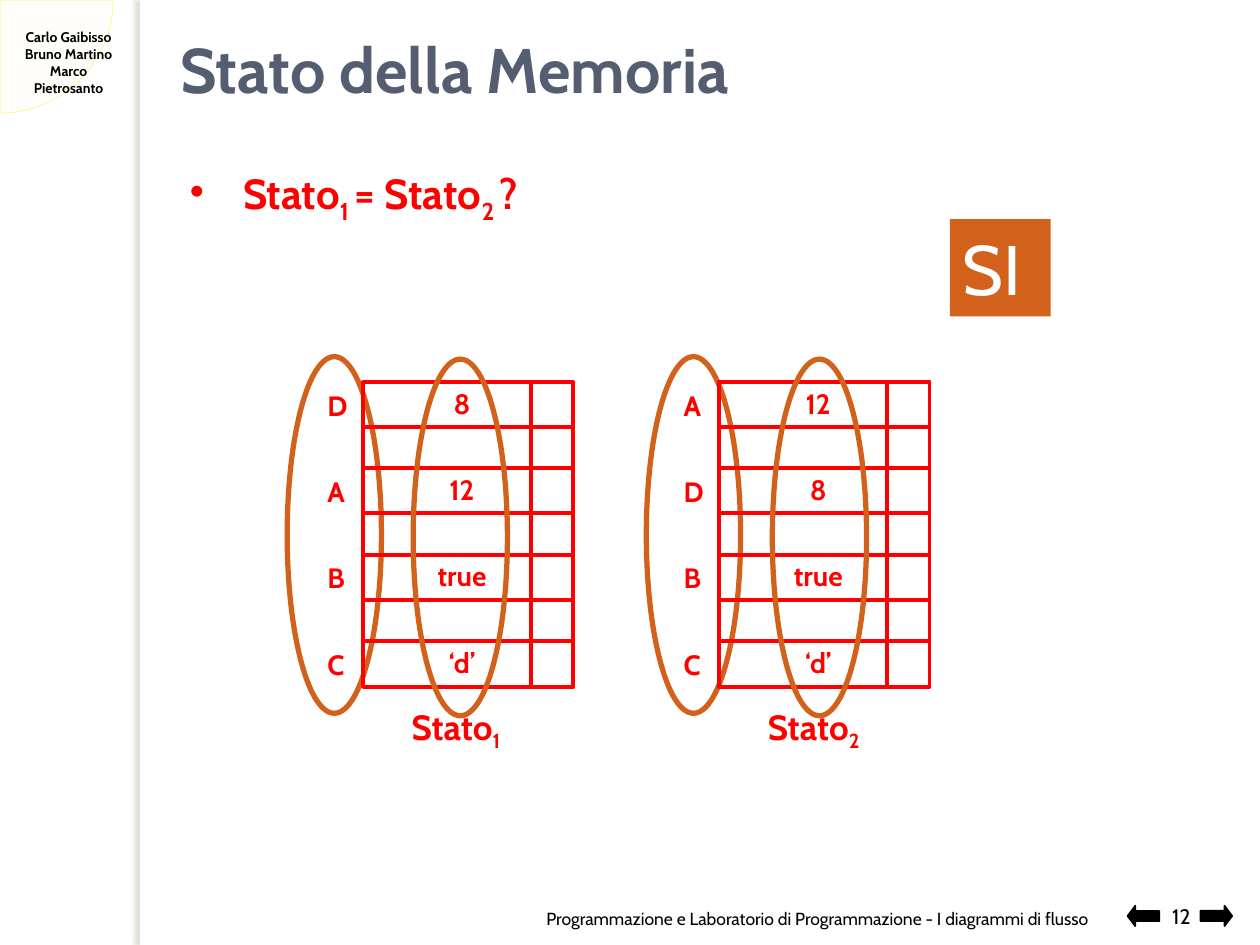
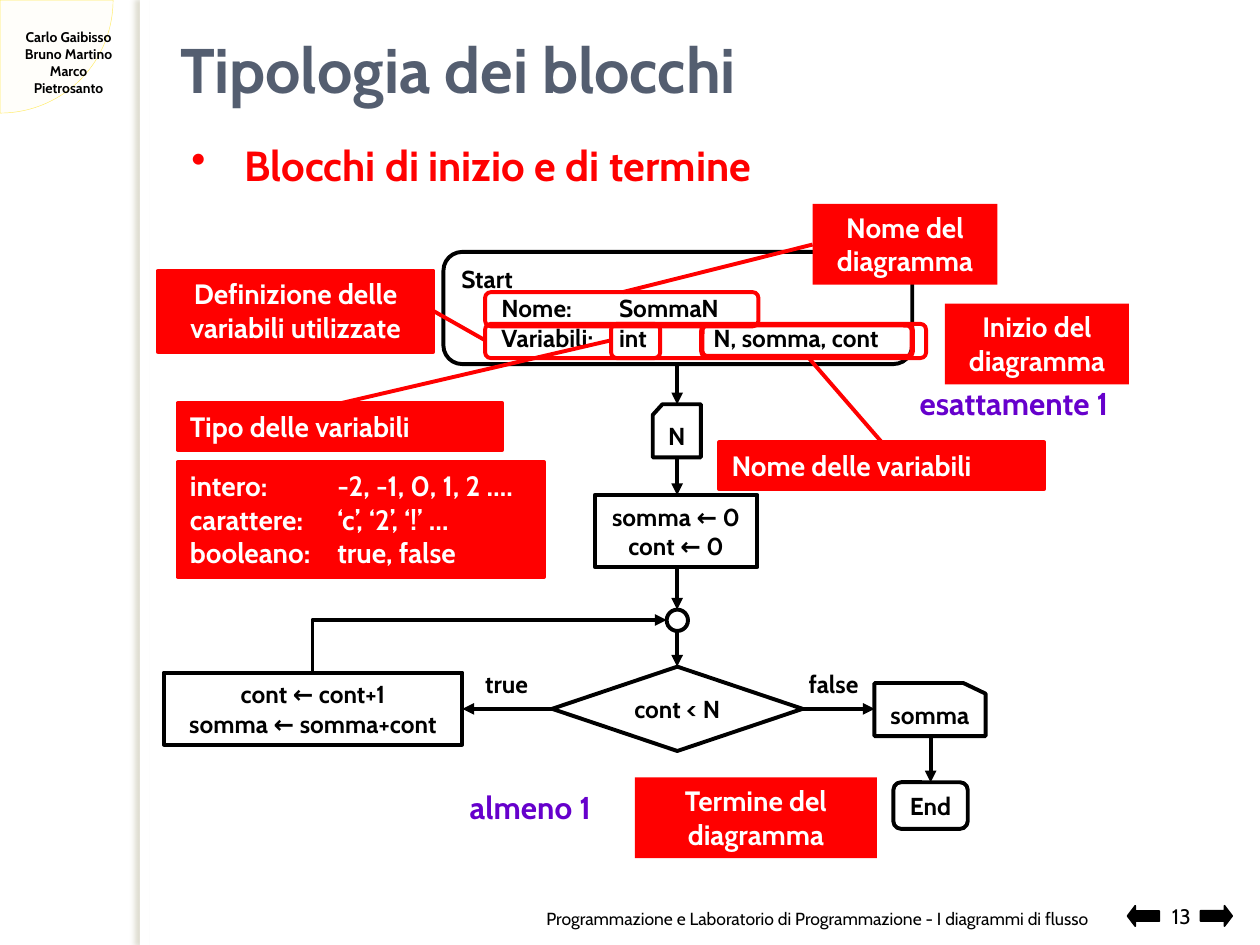
"""Build two slides on memory states and flow chart blocks."""
from itertools import product

from lxml import etree
from pptx import Presentation
from pptx.dml.color import RGBColor
from pptx.enum.shapes import MSO_CONNECTOR, MSO_SHAPE
from pptx.enum.text import MSO_ANCHOR, PP_ALIGN
from pptx.oxml.ns import qn
from pptx.util import Cm, Pt

HUES = {
    "black": "000000", "white": "FFFFFF", "red": "FF0000", "orange": "D2611C",
    "slate": "545E70", "violet": "6600CC", "cream": "FFFDF1",
    "yellow": "FFEC62", "olive": "817B4C",
}
FONT = "Cabin"
LEFT, MID, RIGHT = PP_ALIGN.LEFT, PP_ALIGN.CENTER, PP_ALIGN.RIGHT
TOP, HALF, BASE = MSO_ANCHOR.TOP, MSO_ANCHOR.MIDDLE, MSO_ANCHOR.BOTTOM
RECT, ROUND, OVAL = MSO_SHAPE.RECTANGLE, MSO_SHAPE.ROUNDED_RECTANGLE, MSO_SHAPE.OVAL
PIE, ARROW = MSO_SHAPE.PIE, MSO_SHAPE.RIGHT_ARROW
START, STEP = MSO_SHAPE.FLOWCHART_ALTERNATE_PROCESS, MSO_SHAPE.FLOWCHART_PROCESS
TEST, CARD = MSO_SHAPE.FLOWCHART_DECISION, MSO_SHAPE.FLOWCHART_CARD
JOIN = MSO_SHAPE.FLOWCHART_CONNECTOR
LINE, ELBOW = MSO_CONNECTOR.STRAIGHT, MSO_CONNECTOR.ELBOW


def hue(name):
    """Return the named colour."""
    return RGBColor.from_string(HUES[name])


def node(root, tag, **attrs):
    """Append an XML child with the given attributes."""
    child = etree.SubElement(root, qn(tag))
    for key, value in attrs.items():
        child.set(key, str(value))
    return child


def write(frame, text, size=14, color="black", bold=True, align=LEFT,
          anchor=TOP, wrap=True, gap=None, bullet=False, tabs=()):
    """Fill a text frame; every second part between bars is a subscript."""
    frame.word_wrap = wrap
    frame.vertical_anchor = anchor
    for i, row in enumerate(text.split("\n")):
        para = frame.add_paragraph() if i else frame.paragraphs[0]
        para.alignment = align
        if gap:
            para.space_before = para.space_after = Pt(gap)
        props = para._p.get_or_add_pPr()
        if bullet:
            props.set("marL", str(Cm(1.07)))
            props.set("indent", str(Cm(-1.07)))
            node(props, "a:buChar", char="•")
        if tabs:
            stops = node(props, "a:tabLst")
            for stop in tabs:
                node(stops, "a:tab", pos=Cm(stop), algn="l")
        for j, part in enumerate(row.split("|")):
            run = para.add_run()
            run.text = part
            font = run.font
            font.name, font.size, font.bold = FONT, Pt(size), bold
            font.color.rgb = hue(color)
            if j % 2:
                run._r.get_or_add_rPr().set("baseline", "-25000")


class Deck:
    """Hold the style and the current slide."""

    def __init__(self):
        """Open an empty deck."""
        self.show = Presentation()
        self.show.slide_width, self.show.slide_height = Cm(25.4), Cm(19.05)

    def page(self, title, num):
        """Start a slide with the shared side band, title and footer."""
        self.slide = self.show.slides.add_slide(self.show.slide_layouts[6])
        pie = self.box(PIE, -2.27, -2.27, 4.55, 4.55, fill="cream",
                       line="yellow", wide=0.25, adjust=(0, 54))
        tint = pie._element.spPr.find(qn("a:solidFill"))[0]
        node(tint, "a:alpha", val=33000)
        self.box(RECT, 2.82, 0, 22.58, 19.05, fill="white")
        band = self.box(RECT, 2.82, 0, 0.2, 19.05, fill="white")
        glow = node(band._element.spPr.find(qn("a:effectLst")), "a:outerShdw",
                    blurRad=Pt(3), dist=Pt(3), dir=10800000)
        node(node(glow, "a:srgbClr", val=HUES["olive"]), "a:alpha", val=25000)
        self.note(0, 0.46, 2.77, 1.63,
                  "Carlo Gaibisso\nBruno Martino\nMarco\nPietrosanto",
                  size=8, align=MID)
        for x, turn in ((24.2, 0), (22.73, 180)):
            arrow = self.box(ARROW, x, 18.26, 0.64, 0.41, fill="black",
                             line="black", wide=1, adjust=(0.5, 0.38))
            arrow.rotation = turn
        self.note(3.38, 0.48, 20.83, 1.8, title, size=36, color="slate", anchor=HALF)
        self.note(8.93, 17.53, 13.25, 1.32,
                  "Programmazione e Laboratorio di Programmazione - I diagrammi di flusso",
                  size=10, bold=False, align=RIGHT, anchor=BASE)
        self.note(22.43, 17.53, 2.77, 1.32, str(num),
                  size=12, bold=False, align=MID, anchor=BASE)

    def note(self, x, y, w, h, text, **style):
        """Add a text box."""
        area = self.slide.shapes.add_textbox(Cm(x), Cm(y), Cm(w), Cm(h))
        write(area.text_frame, text, **style)

    def point(self, x, y, w, text):
        """Add a bulleted heading."""
        self.note(x, y, w, 1.27, text, size=24, color="red",
                  anchor=HALF, gap=3, bullet=True)

    def box(self, kind, x, y, w, h, text=None, fill=None, line=None,
            wide=2.25, adjust=(), **style):
        """Add a preset shape."""
        shape = self.slide.shapes.add_shape(kind, Cm(x), Cm(y), Cm(w), Cm(h))
        shape.shadow.inherit = False
        for i, value in enumerate(adjust):
            shape.adjustments[i] = value
        if fill:
            shape.fill.solid()
            shape.fill.fore_color.rgb = hue(fill)
        else:
            shape.fill.background()
        if line:
            shape.line.color.rgb = hue(line)
            shape.line.width = Pt(wide)
        else:
            shape.line.fill.background()
        if text:
            write(shape.text_frame, text, **style)
        return shape

    def block(self, kind, x, y, w, h, text=None):
        """Add a flow chart block."""
        return self.box(kind, x, y, w, h, text, line="black",
                        align=MID, anchor=HALF, wrap=False)

    def label(self, x, y, w, h, text, line="red", **style):
        """Add a red label."""
        self.box(RECT, x, y, w, h, text, fill="red", line=line,
                 size=16, color="white", **style)

    def ring(self, x, y, w, h, wide=2.25):
        """Add a red rounded outline."""
        self.box(ROUND, x, y, w, h, line="red", wide=wide)

    def wire(self, x1, y1, x2, y2, color="red", kind=LINE):
        """Add a line, with an arrowhead when black."""
        wire = self.slide.shapes.add_connector(kind, Cm(x1), Cm(y1), Cm(x2), Cm(y2))
        wire.line.color.rgb = hue(color)
        wire.line.width = Pt(2.25)
        props = wire._element.spPr
        if color == "black":
            node(props.find(qn("a:ln")), "a:tailEnd", type="triangle")
        node(props, "a:effectLst")
        return wire

    def bend(self, x1, y1, x2, y2):
        """Add an arrow that goes up and then right."""
        x, y = (x1 + x2) / 2, (y1 + y2) / 2
        dx, dy = (y1 - y2) / 2, (x2 - x1) / 2
        props = self.wire(x + dx, y + dy, x - dx, y - dy, "black", ELBOW)._element.spPr
        props.xfrm.set("rot", "5400000")
        props.find(qn("a:prstGeom")).set("prst", "bentConnector2")

    def state(self, x, num, names, cells):
        """Add a memory table with its names, values and caption."""
        top, wide, high, step = 7.7, 4.24, 6.15, 1.74
        red = {"size": 16, "color": "red", "wrap": False}
        self.box(RECT, x, top, wide, high, line="red")
        self.wire(x + 3.38, top, x + 3.38, top + high)
        for i, drop in product(range(3), (0.91, step)):
            y = top + i * step + drop
            self.wire(x, y, x + wide, y)
        for i, (name, cell) in enumerate(zip(names, cells)):
            y = top + i * step
            self.note(x - 0.97, y, 0.97, 0.94, name, **red)
            self.note(x + 1.17, y - 0.04, 1.65, 0.94, cell, align=MID, **red)
        self.note(x + 0.73, 14.15, 2.69, 1.09, f"Stato|{num}", size=20,
                  color="red", anchor=HALF, wrap=False, gap=3)


def memory(deck):
    """Draw the slide that compares two memory states."""
    deck.page("Stato della Memoria", 12)
    deck.point(3.58, 3.33, 7.92, "Stato|1 |= Stato|2 |?")
    shift = 7.24

    def loops(x, y):
        for left in (x, x + shift):
            deck.box(OVAL, left, y, 1.9, 7.19, line="orange", wide=3)

    loops(5.79, 7.19)
    deck.state(7.32, 1, "DABC", ("8", "12", "true", "‘d’"))
    deck.state(14.5, 2, "ADBC", ("12", "8", "true", "‘d’"))
    deck.box(RECT, 19.15, 4.42, 2.03, 1.96, "SI", fill="orange",
             size=40, color="white", bold=False)
    loops(8.33, 7.24)


def blocks(deck):
    """Draw the slide with the annotated flow chart."""
    deck.page("Tipologia dei blocchi", 13)
    deck.box(START, 8.94, 5.08, 9.45, 2.26,
             "Start\n\tNome:\tSommaN\n\tVariabili:\tint \tN, somma, cont",
             line="black", anchor=HALF, tabs=(0.81, 3.18))
    for item in (
        (CARD, 13.16, 8.15, 0.97, 1.07, "N"),
        (STEP, 11.99, 9.98, 3.28, 1.45, "somma ← 0\ncont ← 0"),
        (TEST, 11.13, 13.44, 5.05, 1.7, "cont < N"),
        (STEP, 3.3, 13.56, 6.02, 1.45, "cont ← cont+1\nsomma ← somma+cont"),
        (JOIN, 13.44, 12.29, 0.43, 0.43),
        (START, 18.01, 15.77, 1.5, 0.94, "End"),
    ):
        deck.block(*item)
    out = deck.block(CARD, 17.63, 13.77, 2.24, 1.07, "somma")
    out._element.spPr.xfrm.set("flipH", "1")

    axis, row = 13.65, 14.29
    for y1, y2 in ((7.34, 8.15), (9.22, 9.98), (11.45, 12.29), (12.73, 13.44)):
        deck.wire(axis, y1, axis, y2, "black")
    deck.wire(16.16, row, 17.63, row, "black")
    deck.wire(11.13, row, 9.32, row, "black")
    deck.wire(18.76, 14.83, 18.76, 15.77, "black")
    deck.bend(6.3, 13.56, 13.44, 12.5)
    deck.note(9.53, 13.36, 1.5, 0.86, "true", wrap=False)
    deck.note(16.05, 13.36, 1.55, 0.86, "false", wrap=False)

    deck.label(19.05, 6.12, 3.71, 1.63, "Inizio del diagramma", line=None, align=MID)
    deck.label(12.8, 15.67, 4.88, 1.63, "Termine del diagramma", line=None, align=MID)
    deck.point(3.61, 2.69, 18.62, "Blocchi di inizio e di termine")
    deck.note(18.29, 7.62, 4.8, 1.02, "esattamente 1", size=18, color="violet", wrap=False)
    deck.note(9.22, 15.77, 3.3, 1.02, "almeno 1", size=18, color="violet", wrap=False)

    deck.label(16.38, 4.11, 3.73, 1.63, "Nome del diagramma", line=None, align=MID)
    deck.ring(9.78, 5.89, 5.51, 0.69)
    deck.wire(12.55, 5.89, 16.38, 4.93)
    deck.label(14.5, 8.92, 6.55, 0.94, "Nome delle variabili")
    deck.ring(14.15, 6.55, 4.24, 0.64, wide=3)
    deck.wire(16.28, 7.19, 17.78, 8.92)
    deck.ring(12.32, 6.53, 0.99, 0.69)
    deck.label(3.58, 8.13, 6.55, 0.94, "Tipo delle variabili")
    deck.wire(12.32, 6.86, 6.86, 8.13)
    deck.label(3.58, 9.32, 7.39, 2.31,
               "intero:\t-2, -1, 0, 1, 2 ….\ncarattere:\t‘c’, ‘2’, ‘!’ …\n"
               "booleano:\ttrue, false", tabs=(2.97,))
    deck.label(3.18, 5.46, 5.56, 1.63, "Definizione delle variabili utilizzate", align=MID)
    deck.ring(9.78, 6.53, 8.89, 0.69)
    deck.wire(8.74, 6.27, 9.78, 6.86)


def main():
    """Build and save the deck."""
    deck = Deck()
    memory(deck)
    blocks(deck)
    deck.show.save("out.pptx")


if __name__ == "__main__":
    main()
